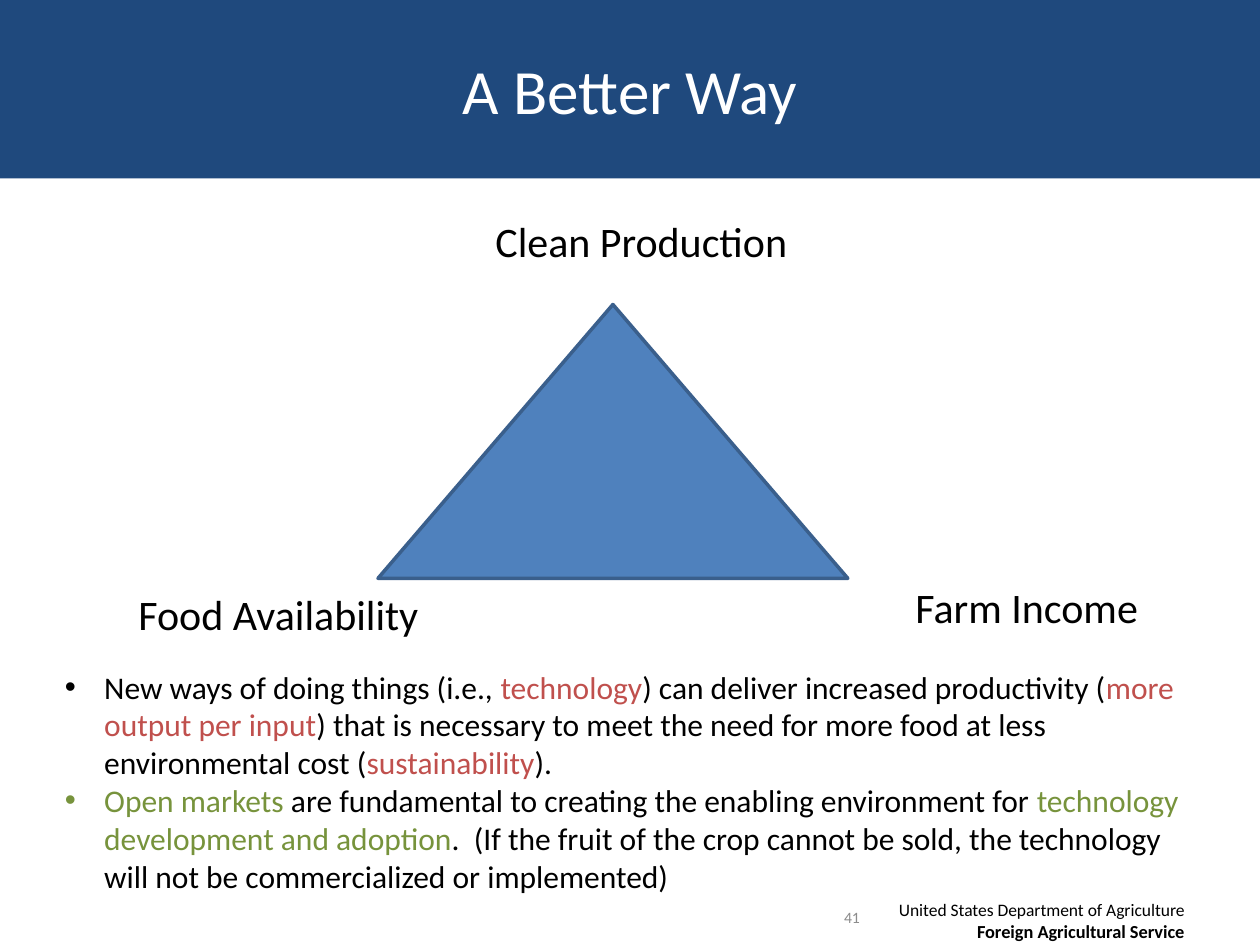
from lxml import etree
from pptx import Presentation
from pptx.dml.color import RGBColor
from pptx.enum.shapes import MSO_SHAPE as SHAPE
from pptx.enum.text import MSO_ANCHOR as ANCHOR, PP_ALIGN as ALIGN
from pptx.oxml.ns import qn
from pptx.util import Pt

FONT = "Calibri"
BLACK, WHITE, GRAY = "000000", "FFFFFF", "8C8C8C"
NAVY, BLUE, EDGE = "1F497D", "4F81BD", "3A5F8C"
RED, GREEN = "C0504D", "77933C"

BULLETS = [
    [("New ways of doing things (i.e., ", BLACK),
     ("technology", RED),
     (") can deliver increased productivity (", BLACK),
     ("more output per input", RED),
     (") that is necessary to meet the need for more food at less "
      "environmental cost (", BLACK),
     ("sustainability", RED),
     (").", BLACK)],
    [("Open markets ", GREEN),
     ("are fundamental to creating the enabling environment for ", BLACK),
     ("technology development and adoption", GREEN),
     (".  (If the fruit of the crop cannot be sold, the technology will not "
      "be commercialized or implemented)", BLACK)],
]

CORNERS = [  # text, left, top, width
    ("Clean Production", 276, 119.5, 183),
    ("Farm Income", 516, 329, 143),
    ("Food Availability", 72, 332.5, 176),
]


def rgb(color):
    return RGBColor.from_string(color)


def add_run(p, text, size=18, color=BLACK, bold=False):
    r = p.add_run()
    r.text = text
    r.font.name, r.font.size, r.font.bold = FONT, Pt(size), bold
    r.font.color.rgb = rgb(color)


def add_text(p, text, align=ALIGN.LEFT, **fmt):
    p.alignment = align
    add_run(p, text, **fmt)


def add_box(s, left, top, width, height, wrap=True, anchor=ANCHOR.TOP):
    tf = s.shapes.add_textbox(Pt(left), Pt(top), Pt(width), Pt(height)).text_frame
    tf.word_wrap, tf.vertical_anchor = wrap, anchor
    return tf


def add_filled(s, kind, left, top, width, height, fill, line=None):
    sp = s.shapes.add_shape(kind, Pt(left), Pt(top), Pt(width), Pt(height))
    sp.shadow.inherit = False
    sp.fill.solid()
    sp.fill.fore_color.rgb = rgb(fill)
    if line:
        sp.line.color.rgb = rgb(line)
        sp.line.width = Pt(2)
    else:
        sp.line.fill.background()
    return sp


def add_bullet(p, parts, indent=22.5):
    pPr = p._p.get_or_add_pPr()
    pPr.set("marL", str(Pt(indent)))
    pPr.set("indent", str(Pt(-indent)))
    etree.SubElement(pPr, qn("a:buFont"), typeface="Arial")
    etree.SubElement(pPr, qn("a:buChar"), char="•")
    for text, color in parts:
        add_run(p, text, color=color)


def main():
    prs = Presentation()
    prs.slide_width, prs.slide_height = Pt(720), Pt(540)
    s = prs.slides.add_slide(prs.slide_layouts[6])

    # Footer and slide number
    tf = add_box(s, 498, 510, 186, 32)
    add_text(tf.paragraphs[0], "United States Department of Agriculture",
             align=ALIGN.RIGHT, size=10)
    add_text(tf.add_paragraph(), "Foreign Agricultural Service",
             align=ALIGN.RIGHT, size=10.5, bold=True)
    tf = add_box(s, 468.5, 510, 30, 28.75, anchor=ANCHOR.MIDDLE)
    add_text(tf.paragraphs[0], "41", align=ALIGN.RIGHT, size=9, color=GRAY)

    # Title band
    tf = add_filled(s, SHAPE.RECTANGLE, 0, 0, 720, 102, NAVY).text_frame
    tf.vertical_anchor = ANCHOR.MIDDLE
    add_text(tf.paragraphs[0], "A Better Way", align=ALIGN.CENTER,
             size=36, color=WHITE)

    # Triangle and its corner labels
    add_filled(s, SHAPE.ISOSCELES_TRIANGLE, 216, 174, 268.5, 156.5, BLUE, EDGE)
    for text, left, top, width in CORNERS:
        tf = add_box(s, left, top, width, 36, wrap=False)
        add_text(tf.paragraphs[0], text, size=24)

    # Bullets
    tf = add_box(s, 30, 378, 654, 138)
    for i, parts in enumerate(BULLETS):
        add_bullet(tf.add_paragraph() if i else tf.paragraphs[0], parts)

    prs.save("out.pptx")


if __name__ == "__main__":
    main()
